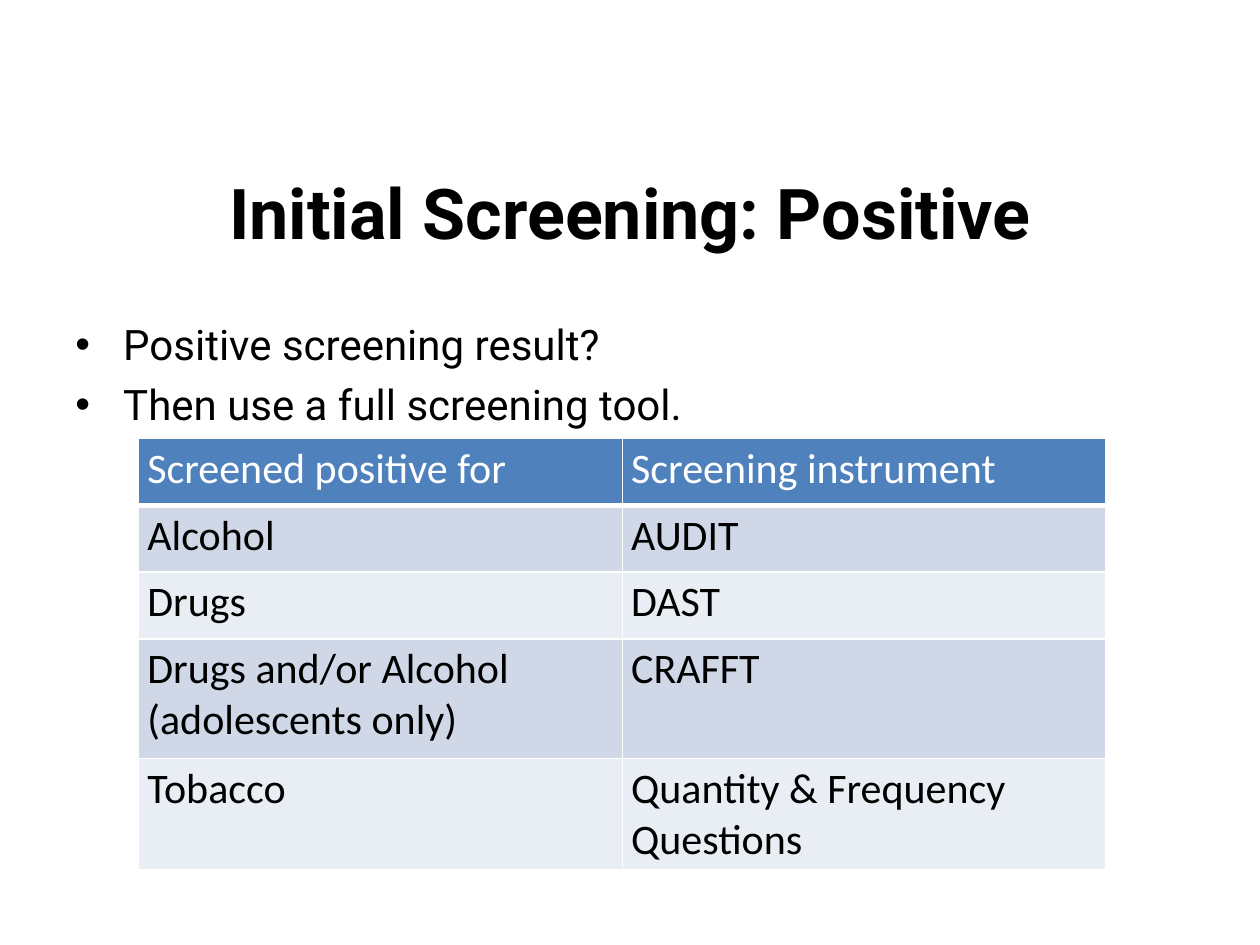
from pptx import Presentation
from pptx.dml.color import RGBColor as Rgb
from pptx.enum.text import MSO_ANCHOR as Anchor, PP_ALIGN as Align
from pptx.oxml.ns import qn
from pptx.util import Inches, Pt
from lxml.etree import SubElement as Sub

COLORS = {"ink": "000000", "white": "FFFFFF", "head": "4F81BD",
          "dark": "D0D8E8", "light": "E9EDF4"}


class Deck:
    def __init__(self, wide, high):
        self.prs = Presentation()
        self.prs.slide_width = Inches(wide)
        self.prs.slide_height = Inches(high)
        self.slide = None

    def add_slide(self):
        self.slide = self.prs.slides.add_slide(self.prs.slide_layouts[5])

    def style(self, par, color="ink", **form):
        for key, val in form.items():
            setattr(par.font, key, val)
        par.font.color.rgb = Rgb.from_string(COLORS[color])

    def title(self, text, box):
        shape = self.slide.shapes.title
        for key, val in zip(("left", "top", "width", "height"), box):
            setattr(shape, key, Inches(val))
        frame = shape.text_frame
        frame.text = text
        frame.vertical_anchor = Anchor.MIDDLE
        par = frame.paragraphs[0]
        par.alignment = Align.CENTER
        self.style(par, name="Roboto", size=Pt(40), bold=True)

    def bullets(self, items, box):
        frame = self.slide.shapes.add_textbox(*map(Inches, box)).text_frame
        frame.word_wrap = True
        for num, text in enumerate(items):
            par = frame.add_paragraph() if num else frame.paragraphs[0]
            par.text = text
            if num:
                par.space_before = Pt(5.6)
            props = par._p.get_or_add_pPr()
            props.set("marL", str(Inches(0.38)))
            props.set("indent", str(Inches(-0.38)))
            Sub(props, qn("a:buFont"), typeface="Arial")
            Sub(props, qn("a:buChar"), char="•")
            self.style(par, name="Roboto", size=Pt(24))

    def border(self, cell, low):
        props = cell._tc.get_or_add_tcPr()
        for side, wide in (("L", 1), ("R", 1), ("T", 1), ("B", low)):
            line = Sub(props, qn(f"a:ln{side}"), w=str(Pt(wide)))
            fill = Sub(line, qn("a:solidFill"))
            Sub(fill, qn("a:srgbClr"), val=COLORS["white"])

    def cell(self, cell, text, fill, color, low):
        self.border(cell, low)
        cell.fill.solid()
        cell.fill.fore_color.rgb = Rgb.from_string(COLORS[fill])
        for side, gap in (("left", 0.07), ("right", 0.07),
                          ("top", 0.04), ("bottom", 0.04)):
            setattr(cell, f"margin_{side}", Inches(gap))
        cell.text = text
        self.style(cell.text_frame.paragraphs[0], color,
                   name="Calibri", size=Pt(24))

    def table(self, rows, highs, box):
        grid = self.slide.shapes.add_table(
            len(rows), len(rows[0]), *map(Inches, box)).table
        for num, (row, high) in enumerate(zip(rows, highs)):
            grid.rows[num].height = Inches(high)
            band = "dark" if num % 2 else "light"
            look = (band, "ink", 1) if num else ("head", "white", 3)
            for col, text in enumerate(row):
                self.cell(grid.cell(num, col), text, *look)


def main():
    deck = Deck(10, 7.5)
    deck.add_slide()

    # Title and lead-in points
    deck.title("Initial Screening: Positive", (0.5, 1.03, 9, 1.3))
    deck.bullets(["Positive screening result?",
                  "Then use a full screening tool."], (0.5, 2.48, 9, 4.33))

    # Which tool follows which result
    rows = [("Screened positive for", "Screening instrument"),
            ("Alcohol", "AUDIT"),
            ("Drugs", "DAST"),
            ("Drugs and/or Alcohol (adolescents only)", "CRAFFT"),
            ("Tobacco", "Quantity & Frequency Questions")]
    deck.table(rows, (0.53, 0.53, 0.53, 0.95, 0.88), (1.1, 3.48, 7.68, 3.42))

    deck.prs.save("out.pptx")


if __name__ == "__main__":
    main()
